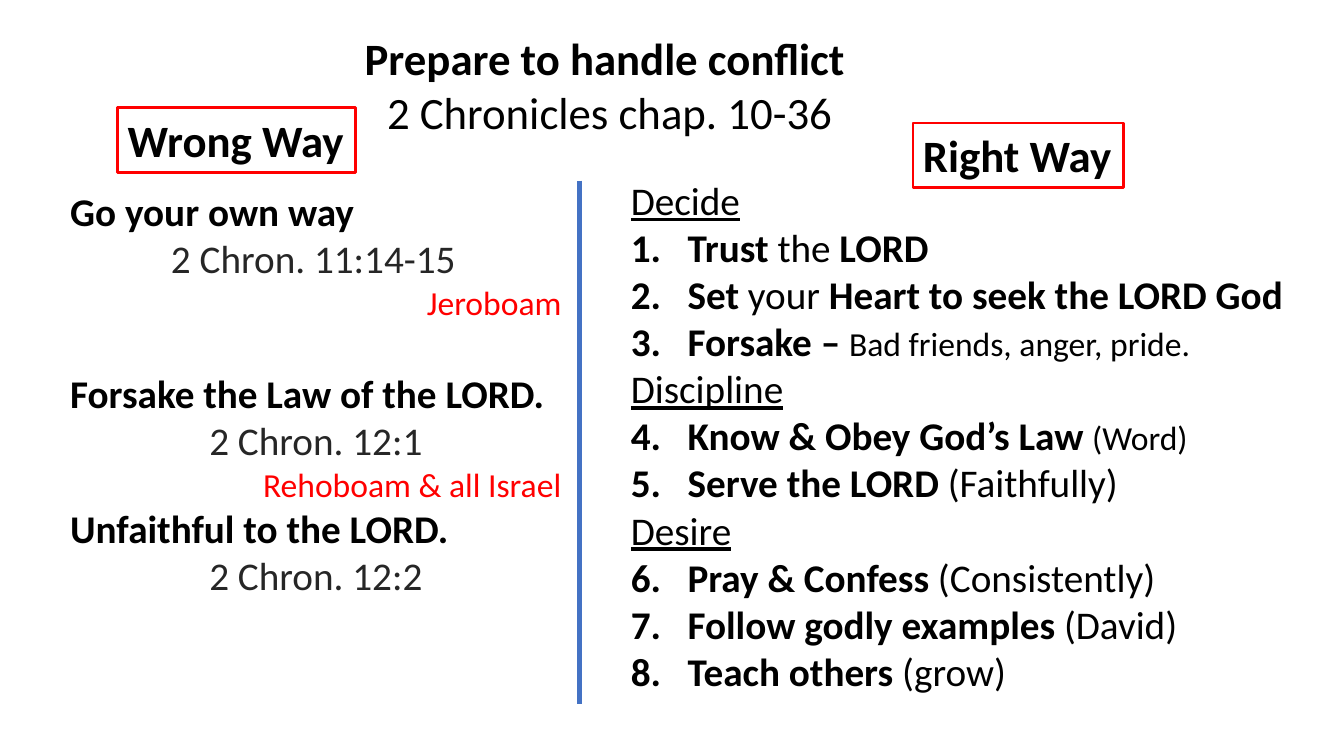
import pptx
import pptx.dml.color
import pptx.enum.shapes
import pptx.enum.text
import pptx.oxml.ns
import pptx.util
from lxml import etree
from pptx.util import Cm

COLORS = {"ink": "000000", "verse": "262626", "accent": "FF0000", "divider": "4472C4"}
FONT = "Calibri"
ALIGN = pptx.enum.text.PP_ALIGN
NUMBER_INDENT = Cm(1.43)
TAB_INDENT = Cm(2.54)
BLANK_LINE = pptx.util.Pt(34)


def color(name):
    return pptx.dml.color.RGBColor.from_string(COLORS[name])


def add_run(paragraph, text, size=28, bold=False, ink="ink", underline=False):
    run = paragraph.add_run()
    run.text = text
    run.font.name = FONT
    run.font.size = pptx.util.Pt(size)
    run.font.bold = bold
    run.font.underline = underline
    run.font.color.rgb = color(ink)


def next_paragraph(frame, align=ALIGN.LEFT):
    first = frame.paragraphs[0]
    paragraph = frame.add_paragraph() if first.runs else first
    paragraph.alignment = align
    return paragraph


def set_indent(paragraph, left, first_line=0):
    properties = paragraph._p.get_or_add_pPr()
    properties.set("marL", str(left))
    properties.set("indent", str(first_line))
    return properties


def number(paragraph, start):
    properties = set_indent(paragraph, NUMBER_INDENT, -NUMBER_INDENT)
    bullet = etree.SubElement(properties, pptx.oxml.ns.qn("a:buAutoNum"), type="arabicPeriod")
    if start > 1:
        bullet.set("startAt", str(start))


def add_text_area(slide, left, top, width, height, wrap=True):
    area = slide.shapes.add_textbox(Cm(left), Cm(top), Cm(width), Cm(height))
    area.text_frame.word_wrap = wrap
    area.text_frame.auto_size = pptx.enum.text.MSO_AUTO_SIZE.SHAPE_TO_FIT_TEXT
    return area


def add_heading(slide):
    heading = slide.shapes.title
    heading.left, heading.top = Cm(6.91), Cm(0.64)
    heading.width, heading.height = Cm(16.92), Cm(3)
    frame = heading.text_frame
    frame.word_wrap = True
    frame.auto_size = pptx.enum.text.MSO_AUTO_SIZE.SHAPE_TO_FIT_TEXT
    frame.vertical_anchor = pptx.enum.text.MSO_ANCHOR.TOP
    add_run(next_paragraph(frame, ALIGN.CENTER), "Prepare to handle conflict ", 32, bold=True)
    add_run(next_paragraph(frame, ALIGN.CENTER), "2 Chronicles chap. 10-36", 32)


def add_framed_label(slide, text, left, top, width):
    label = add_text_area(slide, left, top, width, 1.63, wrap=False)
    label.line.color.rgb = color("accent")
    label.line.width = pptx.util.Pt(2)
    add_run(next_paragraph(label.text_frame), text, 32, bold=True)


def add_divider(slide):
    divider = slide.shapes.add_connector(
        pptx.enum.shapes.MSO_CONNECTOR.STRAIGHT, Cm(14.61), Cm(4.55), Cm(14.61), Cm(17.75))
    divider.line.color.rgb = color("divider")
    divider.line.width = pptx.util.Pt(3.5)
    etree.SubElement(divider._element.spPr, pptx.oxml.ns.qn("a:effectLst"))


def add_failing(frame, fault, verse, people=None, verse_align=ALIGN.CENTER):
    fault_line = next_paragraph(frame)
    add_run(fault_line, fault, bold=True)
    verse_line = next_paragraph(frame, verse_align)
    add_run(verse_line, verse, ink="verse")
    if people:
        add_run(next_paragraph(frame, ALIGN.RIGHT), people, 24, ink="accent")
    return fault_line, verse_line


def add_steps(frame, stage, start, steps):
    add_run(next_paragraph(frame), stage, underline=True)
    for step in steps:
        paragraph = next_paragraph(frame)
        number(paragraph, start)
        for text, bold, size in step:
            add_run(paragraph, text, size, bold)


def main():
    deck = pptx.Presentation()
    deck.slide_width, deck.slide_height = Cm(33.87), Cm(19.05)
    slide = deck.slides.add_slide(deck.slide_layouts.get_by_name("Title Only"))

    # Heading and column labels
    add_heading(slide)
    add_framed_label(slide, "Wrong Way", 2.97, 2.72, 5.99)
    add_framed_label(slide, "Right Way", 23.01, 3.1, 5.31)

    # Wrong way: fault, verse, people
    wrong_way = add_text_area(slide, 1.52, 4.6, 12.88, 12.22).text_frame
    _, first_verse = add_failing(wrong_way, "Go your own way", "2 Chron. 11:14-15",
                                 "Jeroboam", ALIGN.LEFT)
    set_indent(first_verse, TAB_INDENT)
    forsake, _ = add_failing(wrong_way, "Forsake the Law of the LORD.", "2 Chron. 12:1",
                             "Rehoboam & all Israel")
    forsake.space_before = BLANK_LINE
    add_failing(wrong_way, "Unfaithful to the LORD.", "2 Chron. 12:2")

    add_divider(slide)

    # Right way: numbered steps, each run as (text, bold, size)
    right_way = add_text_area(slide, 15.65, 4.32, 17.15, 13.41).text_frame
    add_steps(right_way, "Decide", 1, [
        [("Trust ", True, 28), ("the", False, 28), (" LORD", True, 28)],
        [("Set ", True, 28), ("your", False, 28), (" Heart to seek the LORD God", True, 28)],
        [("Forsake – ", True, 28), ("Bad friends, anger, pride.", False, 24)],
    ])
    add_steps(right_way, "Discipline", 4, [
        [("Know & Obey God’s Law ", True, 28), ("(Word)", False, 24)],
        [("Serve the LORD ", True, 28), ("(Faithfully)", False, 28)],
    ])
    add_steps(right_way, "Desire", 6, [
        [("Pray & Confess ", True, 28), ("(Consistently)", False, 28)],
        [("Follow godly examples ", True, 28), ("(David)", False, 28)],
        [("Teach others ", True, 28), ("(grow)", False, 28)],
    ])

    deck.save("out.pptx")


if __name__ == "__main__":
    main()
